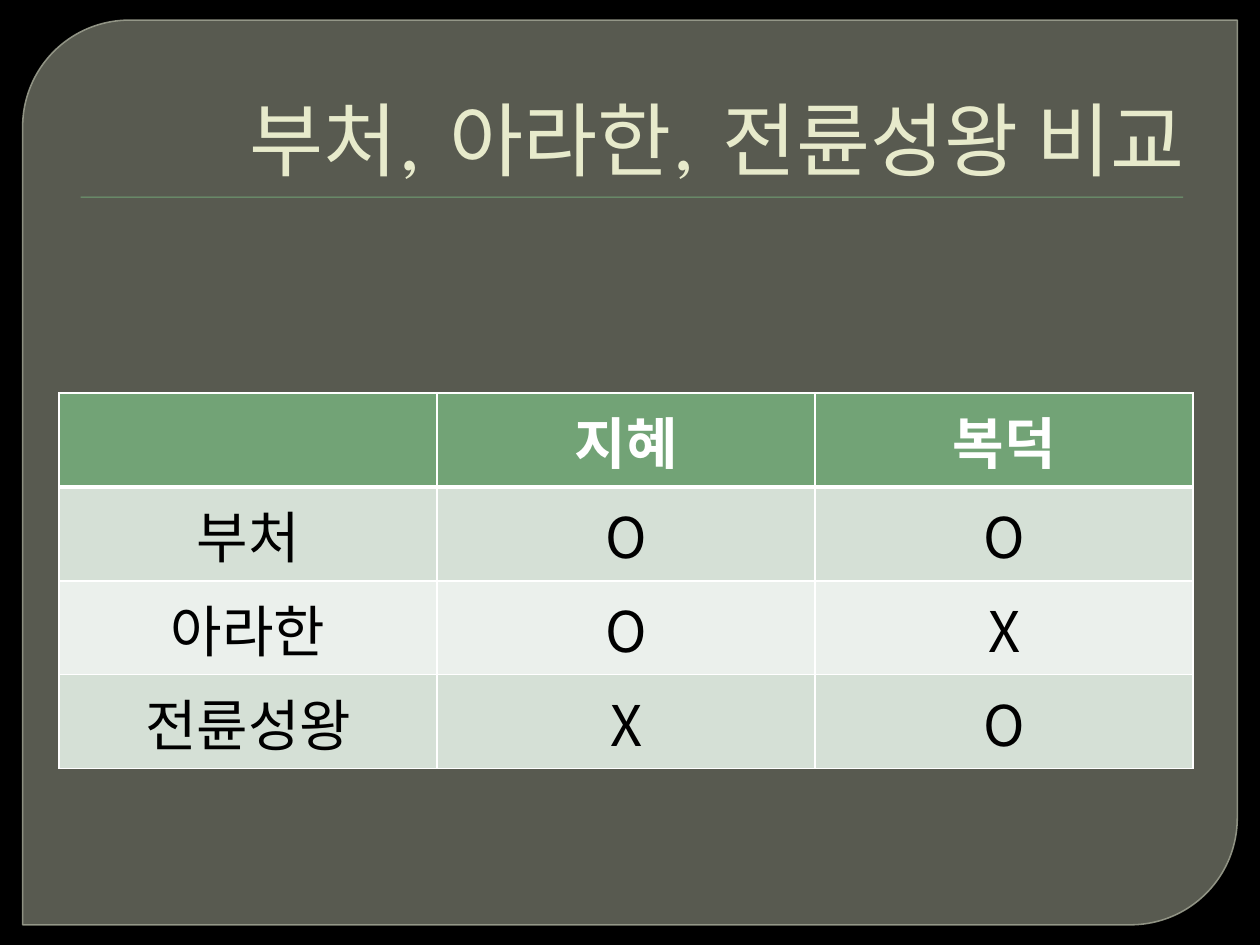
from lxml import etree
from pptx import Presentation
from pptx.dml.color import RGBColor
from pptx.enum import shapes, text
from pptx.oxml.ns import qn
from pptx.util import Inches, Pt

TITLE = "부처, 아라한, 전륜성왕 비교"
ROWS = [
    ("", "지혜", "복덕"),
    ("부처", "O", "O"),
    ("아라한", "O", "X"),
    ("전륜성왕", "X", "O"),
]

BLACK = RGBColor(0x00, 0x00, 0x00)
WHITE = RGBColor(0xFF, 0xFF, 0xFF)
PANEL = RGBColor(0x88, 0x8B, 0x7B)
EDGE = RGBColor(0x9D, 0xA0, 0x90)
CREAM = RGBColor(0xE7, 0xEA, 0xCB)
GREEN = RGBColor(0x72, 0xA3, 0x76)
BANDS = [RGBColor(0xEB, 0xF0, 0xEC), RGBColor(0xD5, 0xE0, 0xD6)]

SANS, SERIF = "Noto Sans CJK KR", "TeX Gyre Bonum"
HEAD = {"name": SANS, "size": Pt(32), "bold": True}
BODY = {**HEAD, "bold": False}


def add(parent, tag, **attrs):
    return etree.SubElement(parent, qn(tag), attrs)


def fade(fill, percent):
    """Set the opacity of a solid fill."""
    color = fill._xPr.find(qn("a:solidFill"))[0]
    add(color, "a:alpha", val=str(percent * 1000))


def write(frame, words, align, color, style):
    para = frame.paragraphs[0]
    para.alignment = align
    if not words:
        return
    run = para.add_run()
    run.text = words
    for key, value in style.items():
        setattr(run.font, key, value)
    run.font.color.rgb = color


def border(cell, low):
    """Draw white cell edges, the bottom one low points wide."""
    props = cell._tc.get_or_add_tcPr()
    for spot, (side, width) in enumerate(zip("LRTB", (1, 1, 1, low))):
        line = etree.Element(qn(f"a:ln{side}"), w=str(Pt(width)))
        add(add(line, "a:solidFill"), "a:srgbClr", val=str(WHITE))
        props.insert(spot, line)


def add_block(slide, kind, box, color):
    block = slide.shapes.add_shape(kind, *map(Inches, box))
    block.shadow.inherit = False
    block.fill.solid()
    block.fill.fore_color.rgb = color
    block.line.fill.background()
    return block


def add_frame(slide):
    kinds = shapes.MSO_SHAPE
    panel = add_block(slide, kinds.ROUND_2_DIAG_RECTANGLE,
                      (0.18, 0.16, 9.64, 7.18), PANEL)
    panel.adjustments[0] = 0.118
    panel.adjustments[1] = 0
    fade(panel.fill, 65)
    panel.line.color.rgb = EDGE
    panel.line.width = Pt(0.87)
    fade(panel.line.fill, 88)
    rule = add_block(slide, kinds.RECTANGLE, (0.64, 1.56, 8.75, 0.01), GREEN)
    effects = rule._element.spPr.find(qn("a:effectLst"))
    shade = add(effects, "a:outerShdw", blurRad=str(Pt(1)), dist=str(Pt(1)),
                dir="5400000")
    add(add(shade, "a:srgbClr", val=str(BLACK)), "a:alpha", val="75000")


def add_title(slide):
    frame = slide.shapes.add_textbox(*map(Inches, (0.5, 0.28, 9, 1.25))).text_frame
    frame.word_wrap = True
    frame.vertical_anchor = text.MSO_ANCHOR.BOTTOM
    write(frame, TITLE, text.PP_ALIGN.RIGHT, CREAM, {"name": SERIF, "size": Pt(46)})


def add_grid(slide):
    box = map(Inches, (0.47, 3.12, 9, 2.98))
    table = slide.shapes.add_table(len(ROWS), len(ROWS[0]), *box).table
    for r, row in enumerate(ROWS):
        head = r == 0
        for c, words in enumerate(row):
            cell = table.cell(r, c)
            cell.fill.solid()
            cell.fill.fore_color.rgb = GREEN if head else BANDS[r % 2]
            border(cell, 3 if head else 1)
            write(cell.text_frame, words, text.PP_ALIGN.CENTER,
                  WHITE if head else BLACK, HEAD if head else BODY)


def main():
    deck = Presentation()
    deck.slide_width, deck.slide_height = Inches(10), Inches(7.5)
    slide = deck.slides.add_slide(deck.slide_layouts[6])
    slide.background.fill.solid()
    slide.background.fill.fore_color.rgb = BLACK
    add_frame(slide)
    add_title(slide)
    add_grid(slide)
    deck.save("out.pptx")


if __name__ == "__main__":
    main()
